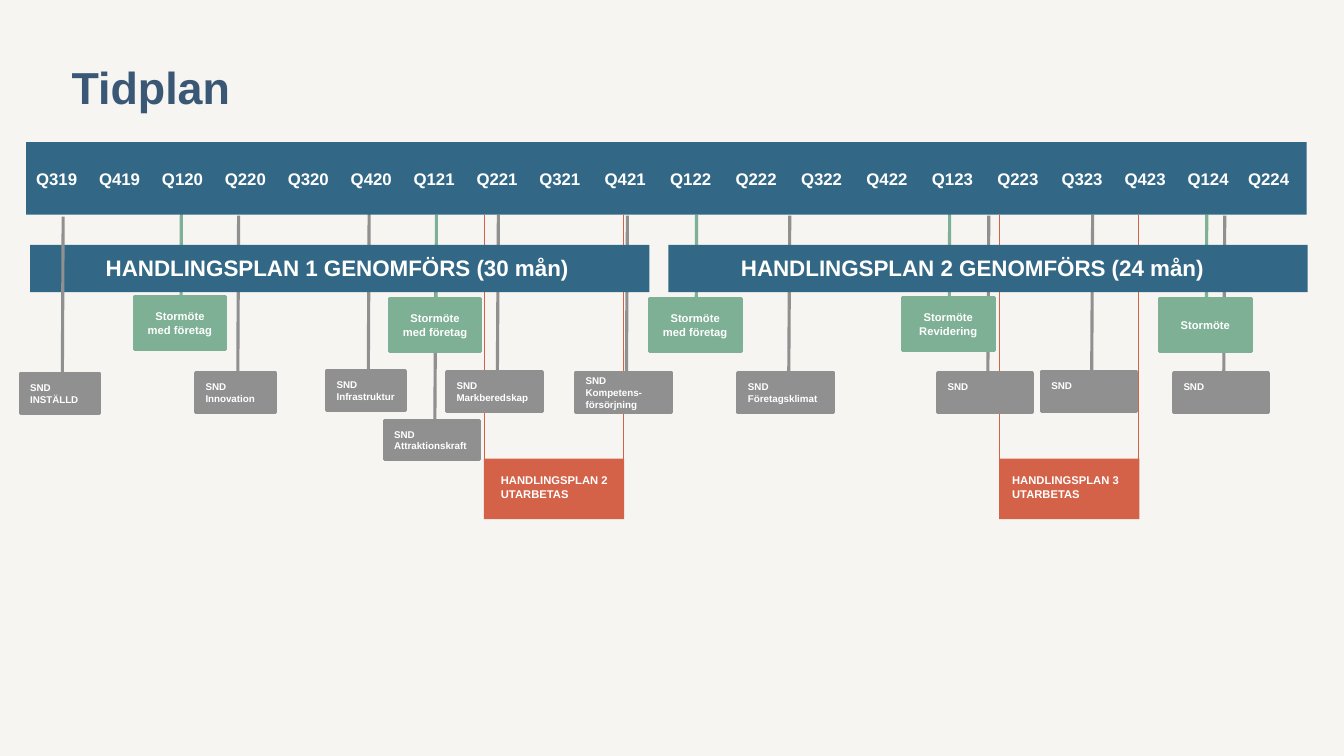
from pptx import Presentation
from pptx.dml.color import RGBColor
from pptx.enum.shapes import MSO_CONNECTOR as Link, MSO_SHAPE as Form
from pptx.enum.text import MSO_ANCHOR as Anchor, PP_ALIGN as Align
from pptx.oxml.ns import qn
from pptx.util import Inches, Pt

PAPER = RGBColor(0xF6, 0xF5, 0xF1)
NAVY = RGBColor(0x3B, 0x57, 0x76)
BLUE = RGBColor(0x32, 0x68, 0x86)
GREEN = RGBColor(0x7D, 0xB0, 0x94)
GREY = RGBColor(0x90, 0x90, 0x90)
RED = RGBColor(0xD4, 0x62, 0x48)
WHITE = RGBColor(0xFF, 0xFF, 0xFF)

FONT = "Arial"
COLS, ROWS = 133.3, 75
RUNS = ((2.6, 6.24, 8), (52.5, 6.49, 8), (104.3, 6.25, 3), (122.8, 0, 1))
SPANS = ((48, 61.8), (99.1, 112.9))
GREY_TAIL = (-0.021, 0.53, -4.003, 0.54)
GREEN_TAIL = (0.076, 0.512, -1.566, 0.515)
NOTES = (
    (38.1, 41.7, 9.5, "SND\vAttraktionskraft"),
    (32.4, 36.8, 7.8, "SND\vInfrastruktur"),
    (44.3, 36.9, 9.5, "SND\vMarkberedskap"),
    (57.1, 37, 9.5, "SND\vKompetens-försörjning"),
    (73.2, 37, 9.5, "SND\vFöretagsklimat"),
    (93, 37, 9.4, "SND"),
    (103.3, 36.9, 9.4, "SND"),
    (116.4, 37, 9.4, "SND"),
    (19.4, 37, 7.9, "SND\vInnovation"),
)
MEETS = (
    (115, 29.6, "Stormöte"),
    (89.5, 29.5, "Stormöte Revidering"),
    (13.3, 29.4, "Stormöte med företag"),
    (38.6, 29.6, "Stormöte med företag"),
    (64.4, 29.6, "Stormöte med företag"),
)


def write(shape, text, size=8, color=WHITE, align=Align.LEFT,
          anchor=Anchor.TOP, right=0.1, bottom=0.05):
    """Fill a shape with formatted text."""
    frame = shape.text_frame
    frame.word_wrap = True
    frame.vertical_anchor = anchor
    frame.margin_left, frame.margin_right = Inches(0.1), Inches(right)
    frame.margin_top, frame.margin_bottom = Inches(0.05), Inches(bottom)
    frame.text = text
    for para in frame.paragraphs:
        para.alignment = align
        for run in para.runs:
            font = run.font
            font.name, font.size, font.bold = FONT, Pt(size), True
            font.color.rgb = color


class Board:
    """Holds the grid, the style and the current slide."""

    def __init__(self, deck):
        """Add a slide and measure its grid."""
        self.slide = deck.slides.add_slide(deck.slide_layouts[5])
        self.col = deck.slide_width / COLS
        self.row = deck.slide_height / ROWS
        fill = self.slide.background.fill
        fill.solid()
        fill.fore_color.rgb = PAPER

    def place(self, x, y, w, h):
        """Turn columns and rows into lengths."""
        return (round(x * self.col), round(y * self.row),
                round(w * self.col), round(h * self.row))

    def title(self, text, *area):
        """Move and fill the title."""
        head = self.slide.shapes.title
        head.left, head.top, head.width, head.height = self.place(*area)
        write(head, text, size=32, color=NAVY, anchor=Anchor.MIDDLE)

    def box(self, color, *area, form=Form.RECTANGLE):
        """Draw a filled shape without outline."""
        shape = self.slide.shapes.add_shape(form, *self.place(*area))
        shape.shadow.inherit = False
        shape.fill.solid()
        shape.fill.fore_color.rgb = color
        shape.line.fill.background()
        return shape

    def label(self, text, *area, **style):
        """Add free text."""
        write(self.slide.shapes.add_textbox(*self.place(*area)), text, **style)

    def call(self, text, color, tail, *area, **style):
        """Draw a callout tied to the time bar."""
        shape = self.box(color, *area, form=Form.LINE_CALLOUT_1)
        shape.line.color.rgb = color
        shape.line.width = Pt(2.25)
        for i, value in enumerate(tail):
            shape.adjustments[i] = value
        write(shape, text, anchor=Anchor.MIDDLE, **style)

    def note(self, x, y, w, text):
        """Draw a grey SND callout."""
        low = 0.05 if "\v" in text else 0.16
        self.call(text, GREY, GREY_TAIL, x, y, w, 3.9,
                  size=7, right=0.05, bottom=low)

    def meet(self, x, y, text):
        """Draw a green meeting callout."""
        self.call(text, GREEN, GREEN_TAIL, x, y, 9.1, 5.3, align=Align.CENTER)

    def line(self, x, top, end):
        """Draw a thin upright line."""
        x, top, _, end = self.place(x, top, 0, end)
        link = self.slide.shapes.add_connector(Link.STRAIGHT, x, top, x, end)
        link.line.color.rgb = RED
        link.line.width = Pt(0.5)
        props = link._element.spPr
        props.append(props.makeelement(qn("a:effectLst"), {}))


def main():
    """Build the time plan."""
    deck = Presentation()
    deck.slide_width, deck.slide_height = Inches(13.33), Inches(7.5)
    board = Board(deck)
    board.title("Tidplan", 6.1, 5.4, 80.2, 6.4)

    for left, right in SPANS:
        for x in (left, right):
            board.line(x, 21.3, 45.5)
        board.box(RED, left, 45.5, 13.9, 6)
    board.label("HANDLINGSPLAN 2 UTARBETAS", 48.7, 46.5, 14.6, 5.4)
    board.label("HANDLINGSPLAN 3\nUTARBETAS", 99.4, 46.5, 14.6, 5.4)

    for note in NOTES:
        board.note(*note)
    for meet in MEETS:
        board.meet(*meet)

    board.box(BLUE, 2.6, 14.1, 127, 7.2)
    term = 2
    for start, step, count in RUNS:
        for i in range(count):
            name = f"Q{term % 4 + 1}{19 + term // 4}"
            board.label(name, start + i * step, 16.25, 8.5, 3, size=12)
            term += 1

    for x, w, left, name in (
        (3, 61.4, 9.5, "HANDLINGSPLAN 1 GENOMFÖRS (30 mån)"),
        (66.3, 63.4, 72.5, "HANDLINGSPLAN 2 GENOMFÖRS (24 mån)"),
    ):
        board.box(BLUE, x, 24.3, w, 4.7)
        board.label(name, left, 24.75, 48.5, 3.7, size=16)
    board.note(2, 37.1, 7.9, "SND\vINSTÄLLD")
    deck.save("out.pptx")


if __name__ == "__main__":
    main()
